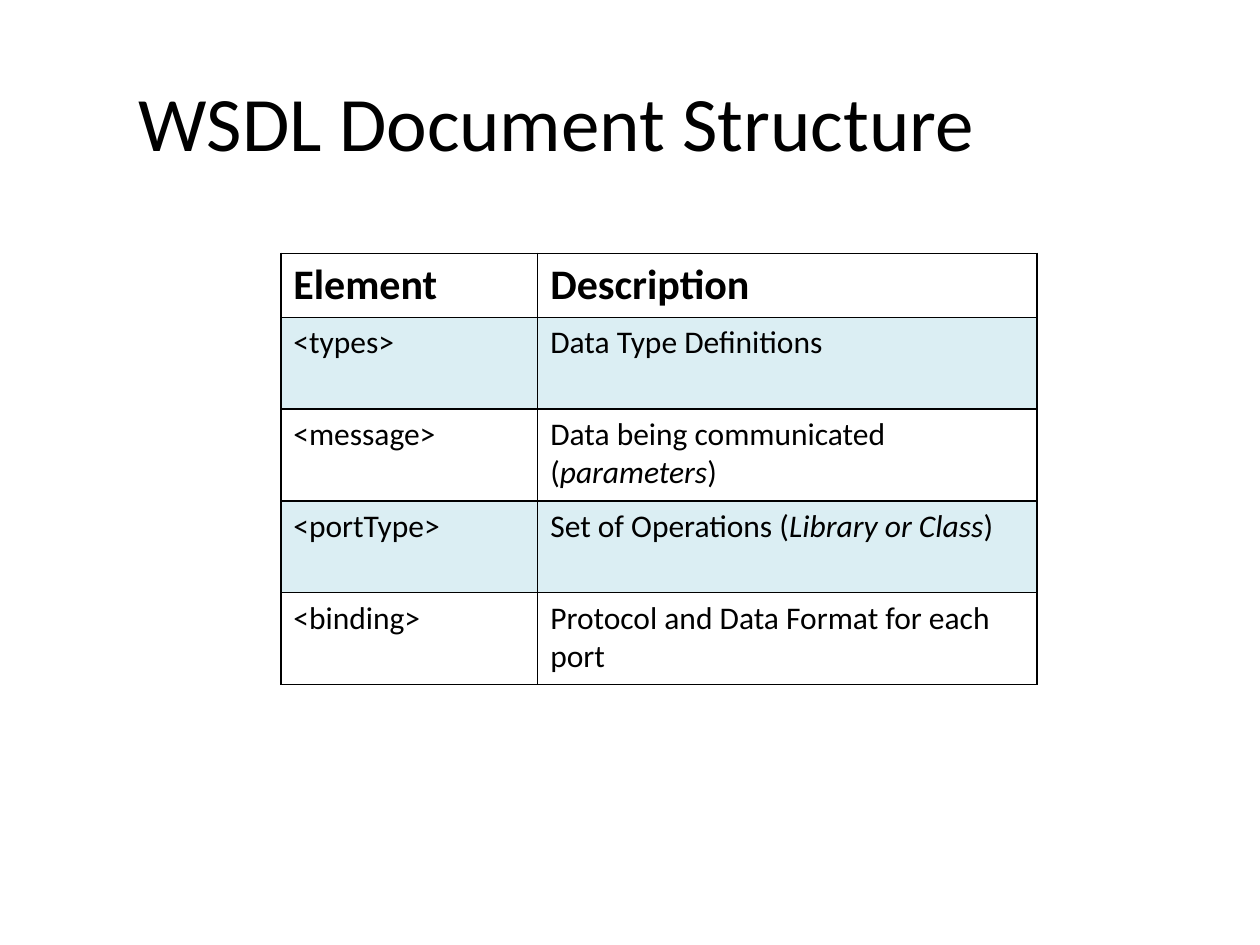
from lxml.etree import SubElement
from pptx import Presentation
from pptx.dml.color import RGBColor
from pptx.enum.text import MSO_ANCHOR as Anchor, PP_ALIGN as Align
from pptx.oxml.ns import qn
from pptx.util import Cm, Pt

BLACK = RGBColor(0x00, 0x00, 0x00)
TEAL = RGBColor(0x4B, 0xAC, 0xC6)
FONT = "Calibri"

# Each cell is a list of runs: (text, italic)
ROWS = [
    ([("Element", False)], [("Description", False)]),
    ([("<types>", False)], [("Data Type Definitions", False)]),
    ([("<message>", False)],
     [("Data being communicated (", False), ("parameters", True), (")", False)]),
    ([("<portType>", False)],
     [("Set of Operations (", False), ("Library or Class", True), (")", False)]),
    ([("<binding>", False)], [("Protocol and Data Format for each port", False)]),
]
COLUMN_WIDTHS = [Cm(5.18), Cm(10.06)]
ROW_HEIGHTS = [Cm(1.25)] + [Cm(1.85)] * 4


def add_run(paragraph, text, size, bold=False, italic=False):
    run = paragraph.add_run()
    run.text = text
    font = run.font
    font.name, font.size, font.bold, font.italic = FONT, Pt(size), bold, italic
    font.color.rgb = BLACK


def add_borders(cell):
    properties = cell._tc.get_or_add_tcPr()
    for side in ("a:lnL", "a:lnR", "a:lnT", "a:lnB"):
        line = SubElement(properties, qn(side), w=str(Pt(1)))
        fill = SubElement(line, qn("a:solidFill"))
        SubElement(fill, qn("a:srgbClr"), val=str(BLACK))


prs = Presentation()
prs.slide_width, prs.slide_height = Cm(25.4), Cm(19.05)
slide = prs.slides.add_slide(prs.slide_layouts[5])

title = slide.shapes.title
title.left, title.top, title.width, title.height = Cm(2.54), Cm(0.84), Cm(20.12), Cm(3.18)
title.text_frame.vertical_anchor = Anchor.MIDDLE
heading = title.text_frame.paragraphs[0]
heading.alignment = Align.LEFT
add_run(heading, "WSDL Document Structure", 44)

elements = slide.shapes.add_table(
    len(ROWS), len(COLUMN_WIDTHS), Cm(5.66), Cm(5.11),
    sum(COLUMN_WIDTHS), sum(ROW_HEIGHTS)).table
elements.horz_banding = False
elements.first_row = False
for column, width in zip(elements.columns, COLUMN_WIDTHS):
    column.width = width

for row_index, (row, height, contents) in enumerate(zip(elements.rows, ROW_HEIGHTS, ROWS)):
    row.height = height
    is_header = row_index == 0
    for cell, runs in zip(row.cells, contents):
        cell.vertical_anchor = Anchor.BOTTOM if is_header else Anchor.TOP
        add_borders(cell)
        if row_index % 2:
            cell.fill.solid()
            cell.fill.fore_color.rgb = TEAL
            tint = cell._tc.tcPr.find(qn("a:solidFill")).find(qn("a:srgbClr"))
            SubElement(tint, qn("a:alpha"), val="20000")
        else:
            cell.fill.background()
        for text, italic in runs:
            add_run(cell.text_frame.paragraphs[0], text,
                    24 if is_header else 18, bold=is_header, italic=italic)

prs.save("out.pptx")
